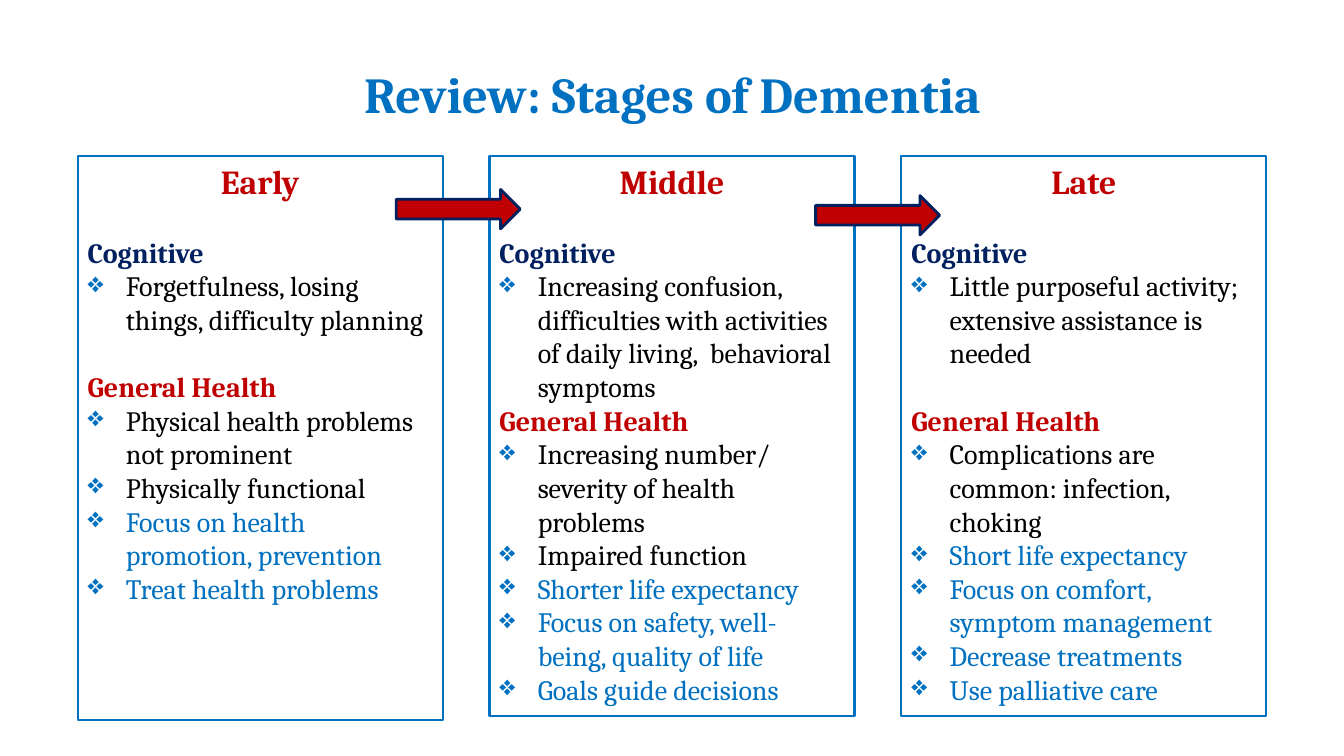
"""Build a slide comparing the early, middle and late stages of dementia."""
from lxml.etree import SubElement
from pptx import Presentation
from pptx.dml.color import RGBColor
from pptx.enum.shapes import MSO_SHAPE as Shape
from pptx.enum.text import MSO_ANCHOR as Anchor, MSO_AUTO_SIZE as AutoSize, PP_ALIGN as Align
from pptx.oxml.ns import qn
from pptx.util import Inches, Pt

TITLE = "Review: Stages of Dementia"
FONT = "Cambria"
COLORS = {"blue": "0070C0", "red": "C00000", "navy": "002060", "black": "000000"}

STAGES = [
    {
        "name": "Early", "height": 5.59, "health_gap": 24,
        "cognitive": ["Forgetfulness, losing things, difficulty planning"],
        "health": ["Physical health problems not prominent", "Physically functional"],
        "care": ["Focus on health promotion, prevention", "Treat health problems"],
    },
    {
        "name": "Middle", "height": 5.55, "health_gap": 0,
        "cognitive": ["Increasing confusion, difficulties with activities of daily living,  "
                      "behavioral symptoms"],
        "health": ["Increasing number/ severity of health problems", "Impaired function"],
        "care": ["Shorter life expectancy", "Focus on safety, well-being, quality of life",
                 "Goals guide decisions"],
    },
    {
        "name": "Late", "height": 5.55, "health_gap": 24,
        "cognitive": ["Little purposeful activity; extensive assistance is needed"],
        "health": ["Complications are common: infection, choking"],
        "care": ["Short life expectancy", "Focus on comfort, symptom management",
                 "Decrease treatments", "Use palliative care"],
    },
]
BOX_LEFT, BOX_TOP, BOX_WIDTH, BOX_STEP = 0.77, 1.55, 3.62, 4.085
ARROWS = [(3.93, 1.88), (8.09, 1.94)]
ARROW_SIZE = (1.23, 0.39)
INDENT = 0.38


def color(name):
    return RGBColor.from_string(COLORS[name])


def write(para, text, size, color_name, bold=False, align=Align.LEFT, gap=0):
    para.text = text
    para.alignment = align
    para.space_before = Pt(gap)
    for span in para.runs:
        span.font.name = FONT
        span.font.size = Pt(size)
        span.font.bold = bold
        span.font.color.rgb = color(color_name)


def add_bullet(para):
    props = para._p.get_or_add_pPr()
    props.set("marL", str(Inches(INDENT)))
    props.set("indent", str(-Inches(INDENT)))
    bullet_color = SubElement(props, qn("a:buClr"))
    SubElement(bullet_color, qn("a:srgbClr"), val=COLORS["blue"])
    SubElement(props, qn("a:buChar"), char="❖")


def add_outlined(slide, kind, bounds, line_color, line_width):
    shape = slide.shapes.add_shape(kind, *(Inches(value) for value in bounds))
    shape.shadow.inherit = False
    shape.line.color.rgb = color(line_color)
    shape.line.width = Pt(line_width)
    return shape


def add_stage(slide, stage, left):
    bounds = (left, BOX_TOP, BOX_WIDTH, stage["height"])
    box = add_outlined(slide, Shape.RECTANGLE, bounds, "blue", 1.5)
    box.fill.background()
    frame = box.text_frame
    frame.word_wrap = True
    frame.auto_size = AutoSize.NONE
    frame.vertical_anchor = Anchor.TOP
    write(frame.paragraphs[0], stage["name"], 24, "red", True, Align.CENTER)

    def add_heading(text, color_name, gap):
        write(frame.add_paragraph(), text, 20, color_name, True, gap=gap)

    def add_list(items, color_name):
        for item in items:
            para = frame.add_paragraph()
            add_bullet(para)
            write(para, item, 20, color_name)

    add_heading("Cognitive", "navy", 24)
    add_list(stage["cognitive"], "black")
    add_heading("General Health", "red", stage["health_gap"])
    add_list(stage["health"], "black")
    add_list(stage["care"], "blue")


def main():
    deck = Presentation()
    deck.slide_width, deck.slide_height = Inches(13.33), Inches(7.5)
    slide = deck.slides.add_slide(deck.slide_layouts[5])

    title = slide.shapes.title
    title.left, title.top = Inches(0.67), Inches(0.3)
    title.width, title.height = Inches(12), Inches(1.25)
    title.text_frame.vertical_anchor = Anchor.MIDDLE
    write(title.text_frame.paragraphs[0], TITLE, 36, "blue", True, Align.CENTER)

    for index, stage in enumerate(STAGES):
        add_stage(slide, stage, BOX_LEFT + index * BOX_STEP)

    for position in ARROWS:
        arrow = add_outlined(slide, Shape.RIGHT_ARROW, position + ARROW_SIZE, "navy", 2)
        arrow.fill.solid()
        arrow.fill.fore_color.rgb = color("red")

    deck.save("out.pptx")


if __name__ == "__main__":
    main()
